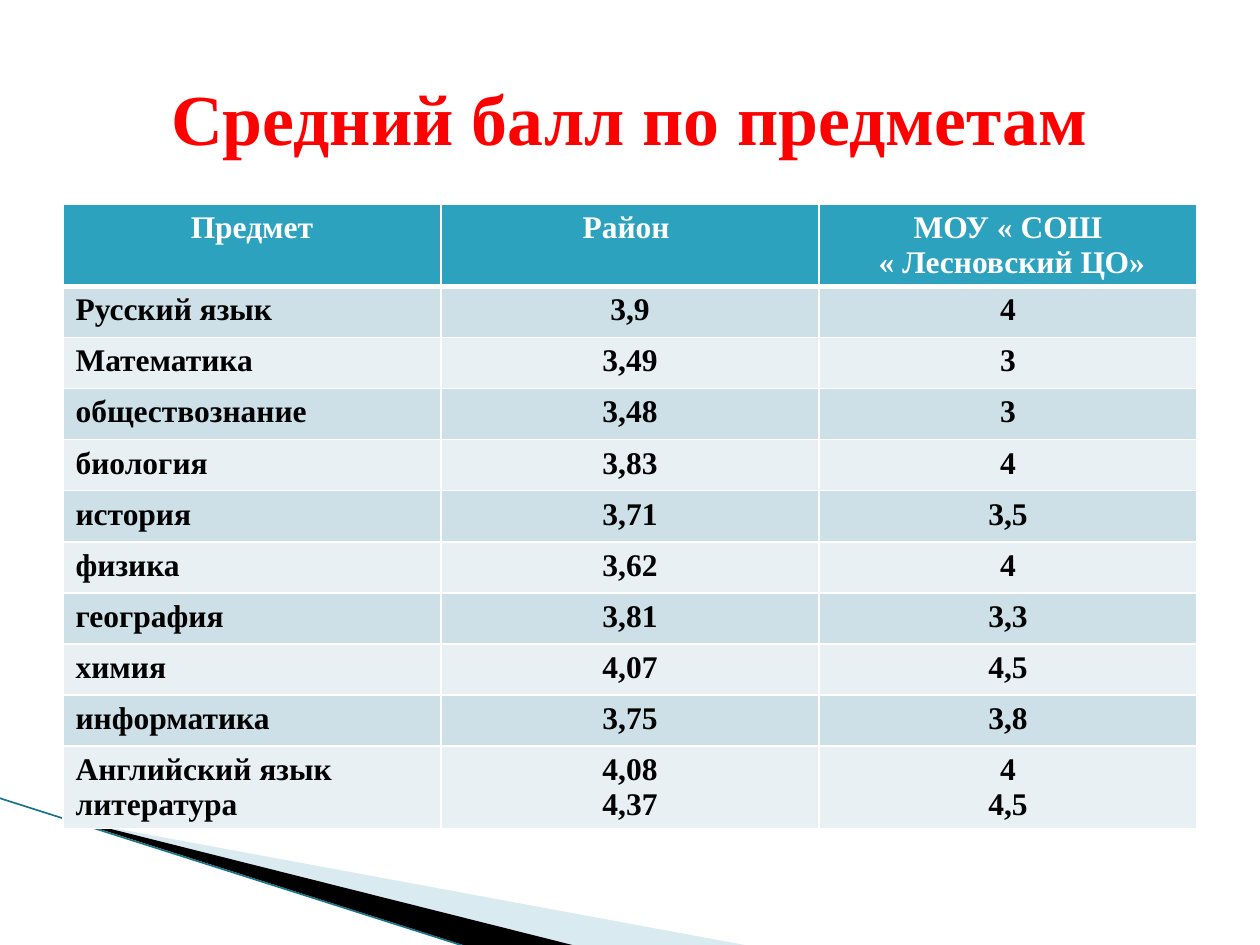
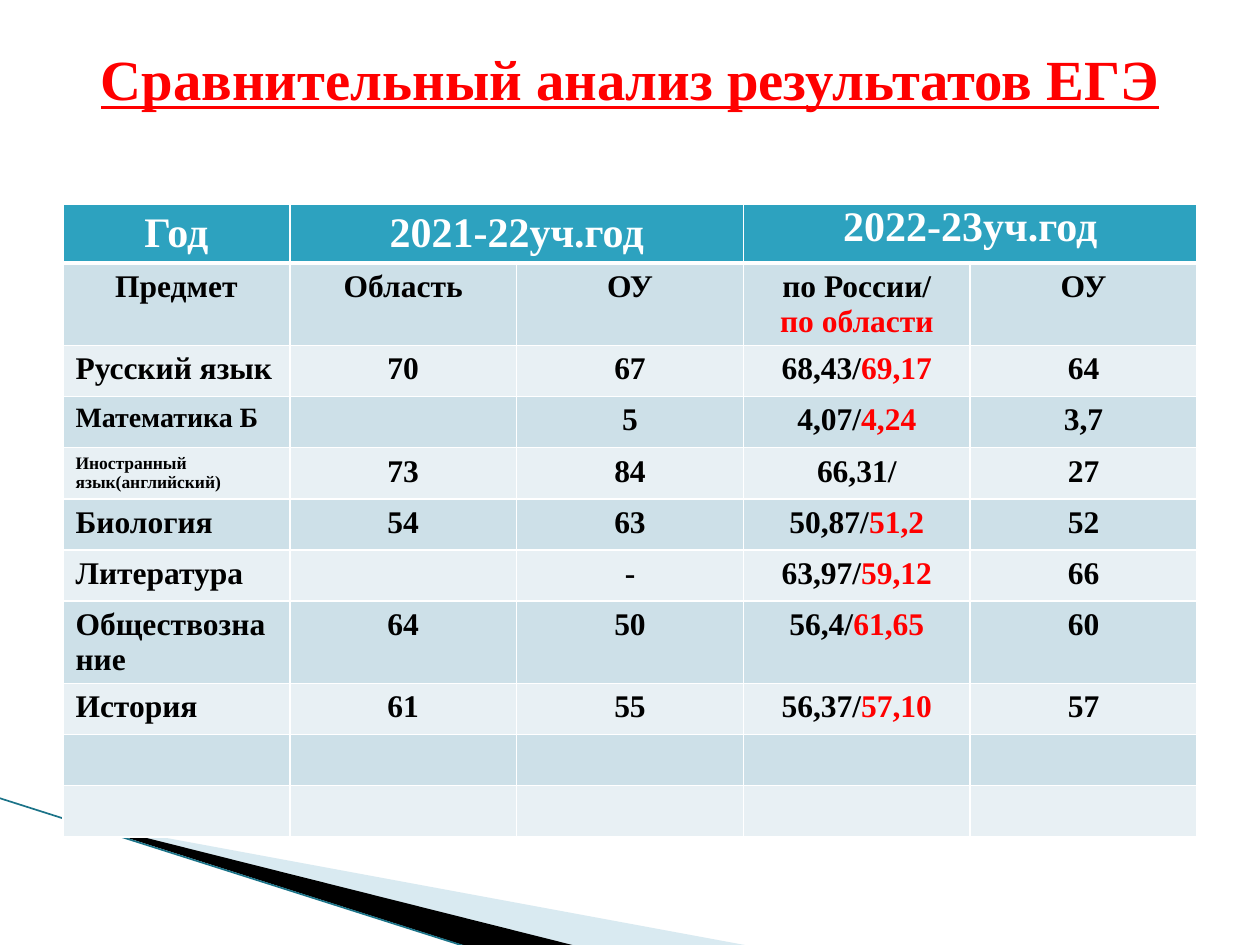
from dataclasses import dataclass, field

from lxml import etree
from pptx import Presentation
from pptx.dml.color import RGBColor
from pptx.enum.shapes import MSO_CONNECTOR
from pptx.enum.text import MSO_ANCHOR, MSO_AUTO_SIZE, PP_ALIGN
from pptx.oxml.ns import qn
from pptx.util import Emu, Pt

STRAIGHT = MSO_CONNECTOR.STRAIGHT
MIDDLE = MSO_ANCHOR.MIDDLE
NO_AUTOFIT = MSO_AUTO_SIZE.NONE
LEFT, CENTER = PP_ALIGN.LEFT, PP_ALIGN.CENTER

# Shared scale, font and colours
EMU_PER_PX = 914400 / 126
SLIDE_WIDTH, SLIDE_HEIGHT = 1260, 945
FONT = "Times New Roman"
COLORS = {
    "title": "FF0000",
    "region": "FF0000",
    "header": "2DA2BF",
    "band_dark": "CDE0E8",
    "band_light": "E8F0F4",
    "white": "FFFFFF",
    "black": "000000",
    "wedge": "A0CBDC",
    "edge": "1B7388",
}
MARGIN_X, CONTENT_WIDTH = 63, 1134
TITLE_TOP, TITLE_HEIGHT = 38, 157
TABLE_TOP, TEN_ROWS_HEIGHT = 204, 511
ROW_HEIGHT = TEN_ROWS_HEIGHT / 10
THIN, THICK = 1, 3


@dataclass
class Wedge:
    """A corner outline whose points may reach beyond its frame."""
    frame: tuple[int, int, int, int]
    points: list[tuple[int, int]]
    color: str
    opacity: int = 100


@dataclass
class TableSlide:
    title: str
    title_size: float
    rows: list[list[str]]
    header_size: int
    header_height: int
    first_label_row: int
    underline: bool = False
    space_below_title: int = 6
    merges: list[tuple[int, int]] = field(default_factory=list)
    flush_columns: list[int] = field(default_factory=list)
    label_sizes: dict[str, int] = field(default_factory=dict)


WEDGES = [
    Wedge((98, 689, 524, 199), [(69, 820), (750, 946), (575, 946), (69, 819)], "wedge", 40),
    Wedge((-8, 798, 524, 116), [(67, 818), (576, 946), (469, 947), (68, 819)], "black"),
]

SUBJECT_AVERAGES = TableSlide(
    title="Средний балл по предметам",
    title_size=41,
    header_size=18,
    header_height=81,
    first_label_row=1,
    rows=[
        ["Предмет", "Район ", "МОУ « СОШ\n « Лесновский ЦО»"],
        ["Русский язык", "3,9", "4"],
        ["Математика", "3,49", "3"],
        ["обществознание", "3,48", "3"],
        ["биология", "3,83", "4"],
        ["история", "3,71", "3,5"],
        ["физика", "3,62", "4"],
        ["география", "3,81", "3,3"],
        ["химия", "4,07", "4,5"],
        ["информатика", "3,75", "3,8"],
        ["Английский язык\nлитература", "4,08\n4,37", "4\n4,5"],
    ],
)

EXAM_COMPARISON = TableSlide(
    title="Сравнительный анализ результатов ЕГЭ",
    title_size=32.4,
    underline=True,
    space_below_title=83,
    header_size=24,
    header_height=58,
    first_label_row=2,
    merges=[(1, 2), (3, 4)],
    flush_columns=[3],
    label_sizes={"Математика Б": 16, "Иностранный язык(английский)": 10},
    rows=[
        ["Год", "2021-22уч.год", "", "2022-23уч.год", ""],
        ["Предмет", "Область", "ОУ", "по России/\nпо области", "ОУ"],
        ["Русский язык", "70", "67", "68,43/69,17", "64"],
        ["Математика Б", "", "5", "4,07/4,24", "3,7"],
        ["Иностранный язык(английский)", "73", "84", "66,31/", "27"],
        ["Биология", "54", "63", "50,87/51,2", "52"],
        ["Литература", "", "-", "63,97/59,12", "66"],
        ["Обществознание", "64", "50", "56,4/61,65", "60"],
        ["История", "61", "55", "56,37/57,10", "57"],
        [""] * 5,
        [""] * 5,
    ],
)


def px(length: float) -> Emu:
    return Emu(round(length * EMU_PER_PX))


def rgb(name: str) -> RGBColor:
    return RGBColor.from_string(COLORS[name])


def add_run(paragraph, text: str, *, size: float, color: str, underline: bool = False) -> None:
    run = paragraph.add_run()
    run.text = text
    font = run.font
    font.name, font.size, font.bold = FONT, Pt(size), True
    font.color.rgb = rgb(color)
    if underline:
        font.underline = True


def write_cell(text_frame, text: str, *, size: float, color: str, align) -> None:
    """Write one paragraph per line; whatever follows a slash is a regional score."""
    for index, line in enumerate(text.split("\n")):
        paragraph = text_frame.paragraphs[0] if index == 0 else text_frame.add_paragraph()
        paragraph.alignment = align
        before, slash, after = line.partition("/")
        if before:
            add_run(paragraph, before + slash, size=size, color=color)
        if slash:
            color = "region"
        if after:
            add_run(paragraph, after, size=size, color=color)


def set_borders(cell, *, top: int, bottom: int) -> None:
    properties = cell._tc.get_or_add_tcPr()
    for side, width in (("L", THIN), ("R", THIN), ("T", top), ("B", bottom)):
        line = etree.SubElement(properties, qn(f"a:ln{side}"), w=str(Pt(width)))
        fill = etree.SubElement(line, qn("a:solidFill"))
        etree.SubElement(fill, qn("a:srgbClr"), val=COLORS["white"])


def set_frame(shape, frame: tuple[int, int, int, int]) -> None:
    """Give a freeform another frame while its outline stays in place."""
    left, top, width, height = (px(length) for length in frame)
    shift_x, shift_y = shape.left - left, shape.top - top
    outline = next(shape._element.iter(qn("a:path")))
    outline.set("w", str(width))
    outline.set("h", str(height))
    for point in outline.iter(qn("a:pt")):
        point.set("x", str(int(point.get("x")) + shift_x))
        point.set("y", str(int(point.get("y")) + shift_y))
    shape.left, shape.top, shape.width, shape.height = left, top, width, height


def add_corner(slide) -> None:
    """Draw the wedges and the thin edge in the lower left corner."""
    for wedge in WEDGES:
        points = [(px(x), px(y)) for x, y in wedge.points]
        builder = slide.shapes.build_freeform(*points[0])
        builder.add_line_segments(points[1:], close=True)
        shape = builder.convert_to_shape()
        set_frame(shape, wedge.frame)
        shape.shadow.inherit = False
        shape.line.fill.background()
        shape.fill.solid()
        shape.fill.fore_color.rgb = rgb(wedge.color)
        if wedge.opacity < 100:
            color = shape._element.spPr.find(f".//{qn('a:srgbClr')}")
            etree.SubElement(color, qn("a:alpha"), val=str(wedge.opacity * 1000))
    edge = slide.shapes.add_connector(STRAIGHT, px(-1), px(798), px(467), px(947))
    edge.line.color.rgb = rgb("edge")
    edge.line.width = Pt(0.95)
    etree.SubElement(edge._element.spPr, qn("a:effectLst"))


def set_title(slide, content: TableSlide) -> None:
    title = slide.shapes.title
    title.left, title.top = px(MARGIN_X), px(TITLE_TOP)
    title.width, title.height = px(CONTENT_WIDTH), px(TITLE_HEIGHT)
    text_frame = title.text_frame
    text_frame.word_wrap = True
    text_frame.auto_size = NO_AUTOFIT
    text_frame.vertical_anchor = MIDDLE
    text_frame.margin_bottom = px(content.space_below_title)
    paragraph = text_frame.paragraphs[0]
    paragraph.alignment = CENTER
    add_run(paragraph, content.title, size=content.title_size, color="title",
            underline=content.underline)


def add_score_table(slide, content: TableSlide) -> None:
    row_count, column_count = len(content.rows), len(content.rows[0])
    height = content.header_height + ROW_HEIGHT * (row_count - 1)
    table = slide.shapes.add_table(row_count, column_count, px(MARGIN_X), px(TABLE_TOP),
                                   px(CONTENT_WIDTH), px(height)).table
    for column in table.columns:
        column.width = px(CONTENT_WIDTH / column_count)
    for row_index, values in enumerate(content.rows):
        is_header = row_index == 0
        table.rows[row_index].height = px(content.header_height if is_header else ROW_HEIGHT)
        band = "header" if is_header else "band_dark" if row_index % 2 else "band_light"
        for column_index, text in enumerate(values):
            cell = table.cell(row_index, column_index)
            set_borders(cell, top=THICK if row_index == 1 else THIN,
                        bottom=THICK if is_header else THIN)
            cell.fill.solid()
            cell.fill.fore_color.rgb = rgb(band)
            is_label = column_index == 0 and row_index >= content.first_label_row
            size = content.header_size if is_header else content.label_sizes.get(text, 18)
            write_cell(cell.text_frame, text, size=size,
                       color="white" if is_header else "black",
                       align=LEFT if is_label else CENTER)
    for first, last in content.merges:
        table.cell(0, first).merge(table.cell(0, last))
    for column_index in content.flush_columns:
        cell = table.cell(0, column_index)
        cell.margin_top = cell.margin_bottom = 0


def main() -> None:
    presentation = Presentation()
    presentation.slide_width, presentation.slide_height = px(SLIDE_WIDTH), px(SLIDE_HEIGHT)
    title_only = presentation.slide_layouts[5]
    for content in (SUBJECT_AVERAGES, EXAM_COMPARISON):
        slide = presentation.slides.add_slide(title_only)
        add_corner(slide)
        add_score_table(slide, content)
        set_title(slide, content)
    presentation.save("out.pptx")


if __name__ == "__main__":
    main()
